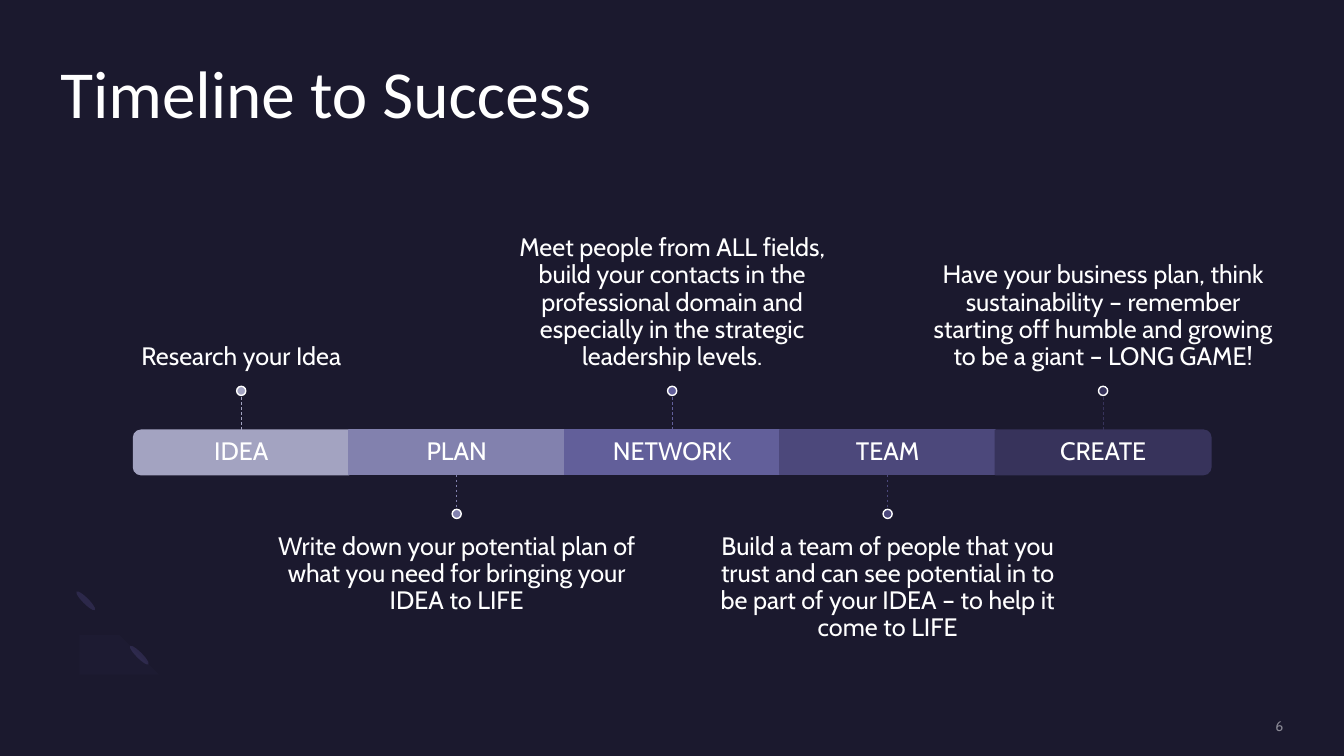
from lxml import etree
from pptx import Presentation
from pptx import util as u
from pptx.dml.color import RGBColor
from pptx.enum import dml, shapes, text
from pptx.oxml.ns import qn

COLORS = {
    "bg": "1B192E", "white": "FFFFFF", "number": "8A8995",
    "leaf": "2C284A", "arc": "7771B2",
    "idea": "A3A3C1", "plan": "8281AE", "network": "625F9A",
    "team": "4C487B", "create": "37335B",
}
STEPS = [
    ("IDEA", "Research your Idea"),
    ("PLAN", "Write down your potential plan of what you need for bringing "
             "your IDEA to LIFE"),
    ("NETWORK", "Meet people from ALL fields, build your contacts in the "
                "professional domain and especially in the strategic "
                "leadership levels."),
    ("TEAM", "Build a team of people that you trust and can see potential in "
             "to be part of your IDEA – to help it come to LIFE"),
    ("CREATE", "Have your business plan, think sustainability – remember "
               "starting off humble and growing to be a giant – LONG GAME!"),
]
ARC = [
    ((1.93, 16.74), (1.42, 16.23), (1.47, 15.37), (2.06, 14.78)),
    ((2.51, 15.24), (2.21, 15.52), (2.18, 15.98), (2.44, 16.21)),
    ((2.44, 16.21), (2.69, 16.46), (3.12, 16.43), (3.43, 16.15)),
    ((3.86, 16.61), (3.3, 17.17), (2.41, 17.25), (1.93, 16.74)),
]
TOP, MIDDLE, BOTTOM = (text.MSO_ANCHOR.TOP, text.MSO_ANCHOR.MIDDLE,
                       text.MSO_ANCHOR.BOTTOM)
LEFT, CENTER, RIGHT = (text.PP_ALIGN.LEFT, text.PP_ALIGN.CENTER,
                       text.PP_ALIGN.RIGHT)
SHAPE = shapes.MSO_SHAPE


def rgb(name):
    """Return the named colour."""
    return RGBColor.from_string(COLORS[name])


def bezier(a, b, c, d, n=10):
    """Sample a cubic curve at n + 1 points."""
    return [tuple((1 - t) ** 3 * p + 3 * t * (1 - t) ** 2 * q
                  + 3 * t * t * (1 - t) * r + t ** 3 * s
                  for p, q, r, s in zip(a, b, c, d))
            for t in (i / n for i in range(n + 1))]


class Deck:
    """Hold the style and the current slide."""

    font, title_font, size = "Cabin", "Calibri", 18

    def __init__(self, prs):
        """Add a title-only slide with a dark background."""
        self.s = prs.slides.add_slide(prs.slide_layouts[5])
        self.s.background.fill.solid()
        self.s.background.fill.fore_color.rgb = rgb("bg")

    def set_text(self, sp, words, size, font, color, align, anchor,
                 spacing=0.9, top=0, bottom=0):
        """Fill a text frame with one formatted paragraph."""
        tf = sp.text_frame
        tf.text = words
        tf.word_wrap = True
        tf.auto_size = text.MSO_AUTO_SIZE.NONE
        tf.vertical_anchor = anchor
        tf.margin_left = tf.margin_right = 0
        tf.margin_top, tf.margin_bottom = u.Cm(top), u.Cm(bottom)
        p = tf.paragraphs[0]
        p.alignment, p.line_spacing = align, spacing
        r = p.runs[0]
        r.font.name, r.font.size = font, u.Pt(size)
        r.font.color.rgb = rgb(color)

    def title(self, words, x, y, w, h):
        """Place and format the title placeholder."""
        sp = self.s.shapes.title
        sp.left, sp.top, sp.width, sp.height = map(u.Cm, (x, y, w, h))
        self.set_text(sp, words, 48, self.title_font, "white", LEFT, TOP)

    def text(self, words, x, y, w, h, size=None, color="white", align=CENTER,
             anchor=MIDDLE, **layout):
        """Add a text box."""
        sp = self.s.shapes.add_textbox(*map(u.Cm, (x, y, w, h)))
        self.set_text(sp, words, size or self.size, self.font, color, align,
                      anchor, **layout)

    def shape(self, kind, cx, cy, w, h, fill, line=None, rotation=0):
        """Add a preset shape around a centre point."""
        sp = self.s.shapes.add_shape(
            kind, *map(u.Cm, (cx - w / 2, cy - h / 2, w, h)))
        sp.rotation = rotation
        self.paint(sp, fill, line)

    def paint(self, sp, fill, line=None):
        """Set the fill and outline and drop the shadow."""
        sp.shadow.inherit = False
        sp.fill.solid()
        sp.fill.fore_color.rgb = rgb(fill)
        if line:
            sp.line.color.rgb = rgb(line)
            sp.line.width = u.Pt(1)
        else:
            sp.line.fill.background()

    def stem(self, x, y1, y2, color):
        """Add a thin dashed vertical line."""
        c = self.s.shapes.add_connector(
            shapes.MSO_CONNECTOR.STRAIGHT, *map(u.Cm, (x, y1, x, y2)))
        c.line.color.rgb = rgb(color)
        c.line.width = u.Pt(0.5)
        c.line.dash_style = dml.MSO_LINE.DASH
        etree.SubElement(c._element.spPr, qn("a:effectLst"))

    def outline(self, points, fill, opacity):
        """Add a closed translucent outline."""
        fb = self.s.shapes.build_freeform(*points[0], scale=u.Cm(1))
        fb.add_line_segments(points[1:], close=True)
        sp = fb.convert_to_shape()
        self.paint(sp, fill)
        clr = sp._element.spPr.find(".//" + qn("a:srgbClr"))
        etree.SubElement(clr, qn("a:alpha"), val=str(opacity * 1000))


def main():
    """Build the timeline slide."""
    prs = Presentation()
    prs.slide_width, prs.slide_height = u.Cm(33.87), u.Cm(19.05)
    deck = Deck(prs)
    for cx, cy in ((3.51, 16.51), (2.16, 15.14)):
        deck.shape(SHAPE.OVAL, cx, cy, 0.15, 0.66, "leaf", rotation=135)
    deck.outline([pt for curve in ARC for pt in bezier(*curve)], "arc", 3)
    deck.title("Timeline to Success", 1.52, 1.52, 30.81, 3.71)

    step, bar_h, bar_y, note_w, note_h = 5.43, 1.12, 11.4, 9.07, 3.86
    ends = {0: 270, len(STEPS) - 1: 90}
    for i, (label, note) in enumerate(STEPS):
        color = label.lower()
        cx = 16.94 + (i - 2) * step
        if i in ends:
            deck.shape(SHAPE.ROUND_2_SAME_RECTANGLE, cx, bar_y, bar_h, step,
                       color, color, ends[i])
        else:
            deck.shape(SHAPE.RECTANGLE, cx, bar_y, step, bar_h, color, color)
        deck.text(label, cx - step / 2, bar_y - bar_h / 2, step, bar_h)
        if i % 2:
            deck.text(note, cx - note_w / 2, 13.06, note_w, note_h,
                      anchor=TOP, top=0.38)
        else:
            deck.text(note, cx - note_w / 2, 5.87, note_w, note_h,
                      anchor=BOTTOM, bottom=0.38)
        side = 1 if i % 2 else -1
        deck.stem(cx, bar_y + side * 0.56, bar_y + side * 1.44, color)
        deck.shape(SHAPE.OVAL, cx, bar_y + side * 1.55, 0.23, 0.23,
                   color, "white")
    deck.text("6", 27.64, 18.08, 4.7, 0.43, size=10, color="number",
              align=RIGHT, spacing=1)
    prs.save("out.pptx")


if __name__ == "__main__":
    main()
